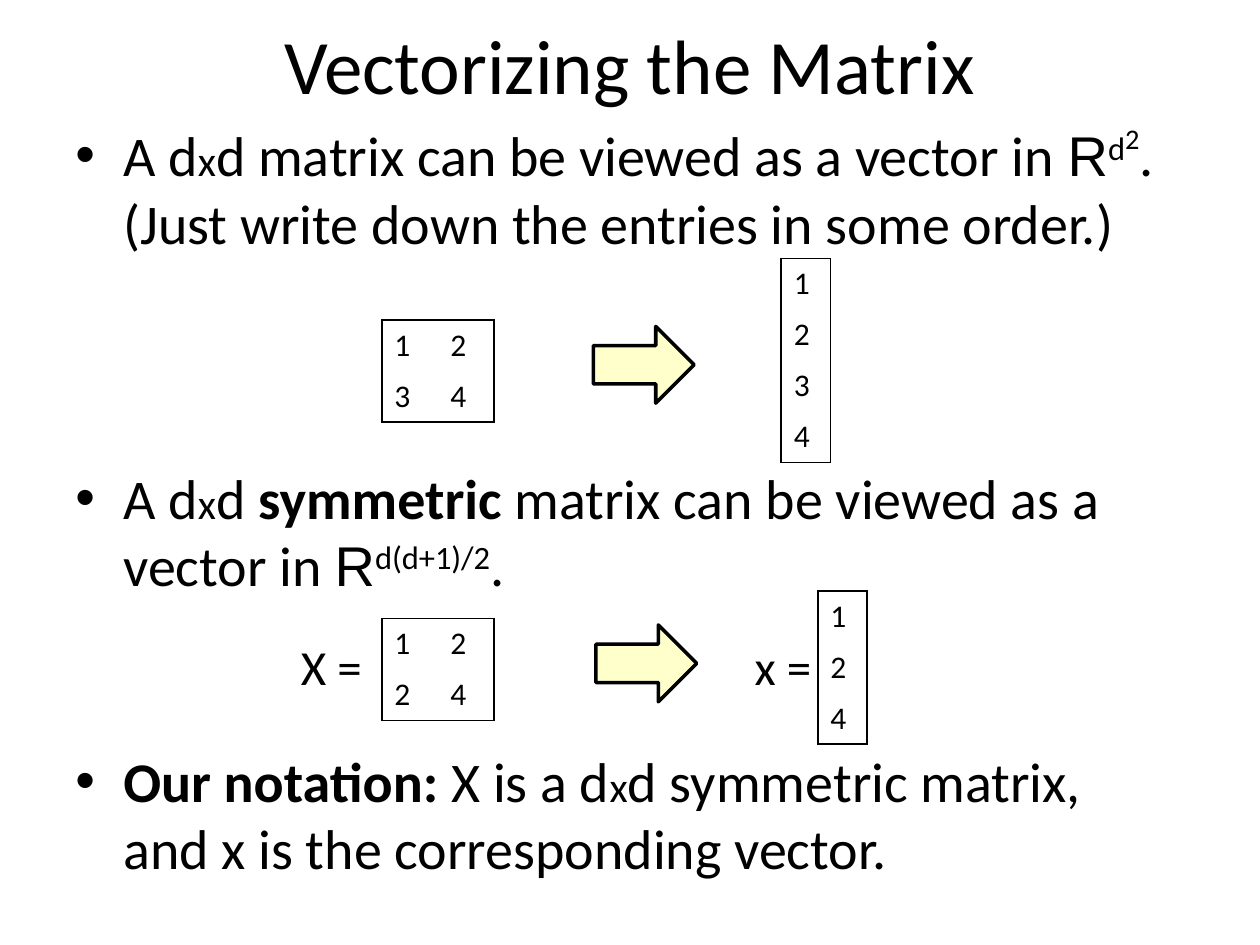
"""Builds a slide on turning a matrix into a vector."""
from lxml import etree
from pptx import Presentation
from pptx import util as u
from pptx.dml import color
from pptx.enum import shapes, text
from pptx.oxml import ns

BLACK = "000000"
CREAM = "FFFFCC"


def rgb(value):
    return color.RGBColor.from_string(value)


class Painter:
    def __init__(self, page, font="Calibri", ink=BLACK):
        self.page, self.font, self.ink = page, font, ink

    def span(self, para, words, size, bold=False, font=None, raised=0):
        span = para.add_run()
        span.text = words
        span.font.size = u.Pt(size)
        span.font.name = font or self.font
        span.font.bold = bold
        span.font.color.rgb = rgb(self.ink)
        if raised:
            span.font._element.set("baseline", str(raised * 1000))

    def box(self, left, top, width, height, wrap=True):
        frame = self.page.shapes.add_textbox(*map(u.Inches, (left, top, width, height))).text_frame
        frame.word_wrap = wrap
        return frame

    def label(self, words, size, *place, centred=False):
        frame = self.box(*place, wrap=centred)
        if centred:
            frame.vertical_anchor = text.MSO_ANCHOR.MIDDLE
            frame.paragraphs[0].alignment = text.PP_ALIGN.CENTER
        self.span(frame.paragraphs[0], words, size)

    def bullets(self, items, size, indent, *place):
        frame = self.box(*place)
        for index, (gap, lines) in enumerate(items):
            para = frame.add_paragraph() if index else frame.paragraphs[0]
            para.space_before = u.Pt(gap)
            props = para._p.get_or_add_pPr()
            props.set("marL", str(u.Inches(indent)))
            props.set("indent", str(-u.Inches(indent)))
            etree.SubElement(props, ns.qn("a:buFont")).set("typeface", "Arial")
            etree.SubElement(props, ns.qn("a:buChar")).set("char", "•")
            for number, line in enumerate(lines):
                if number:
                    para.add_line_break()
                for words, style in line:
                    self.span(para, words, **{"size": size, **style})

    def edge(self, props, side, visible, position):
        line = etree.Element(ns.qn(f"a:ln{side}"), w=str(u.Pt(1)))
        fill = etree.SubElement(line, ns.qn("a:solidFill" if visible else "a:noFill"))
        if visible:
            etree.SubElement(fill, ns.qn("a:srgbClr")).set("val", self.ink)
        props.insert(position, line)

    def matrix(self, rows, left, top, width, row_height=0.405):
        last_row, last_col = len(rows) - 1, len(rows[0]) - 1
        size = (left, top, width, row_height * len(rows))
        table = self.page.shapes.add_table(len(rows), len(rows[0]), *map(u.Inches, size)).table
        table.first_row = table.horz_banding = False
        for r, row in enumerate(rows):
            for c, value in enumerate(row):
                cell = table.cell(r, c)
                cell.fill.background()
                self.span(cell.text_frame.paragraphs[0], str(value), 18)
                sides = {"L": c == 0, "R": c == last_col, "T": r == 0, "B": r == last_row}
                for position, (side, visible) in enumerate(sides.items()):
                    self.edge(cell._tc.get_or_add_tcPr(), side, visible, position)

    def arrow(self, left, top):
        place = map(u.Inches, (left, top, 0.8, 0.61))
        shape = self.page.shapes.add_shape(shapes.MSO_SHAPE.RIGHT_ARROW, *place)
        shape.shadow.inherit = False
        shape.fill.solid()
        shape.fill.fore_color.rgb = rgb(CREAM)
        shape.line.color.rgb = rgb(self.ink)
        shape.line.width = u.Pt(2)


def main():
    deck = Presentation()
    deck.slide_width, deck.slide_height = u.Inches(10), u.Inches(7.5)
    painter = Painter(deck.slides.add_slide(deck.slide_layouts[6]))

    plain, bold, times = {}, {"bold": True}, ("x", {"size": 24})
    reals = ("R", {"font": "Arial"})
    items = [
        (0, [
            [("A d", plain), times, ("d matrix can be viewed as a vector in ", plain), reals,
             ("d", {"raised": 30}), ("2", {"size": 28, "raised": 55}), (".", plain)],
            [("(Just write down the entries in some order.)", plain)],
        ]),
        (119, [
            [("A d", plain), times, ("d ", plain), ("symmetric", bold),
             (" matrix can be viewed as a vector in ", plain), reals,
             ("d(d+1)/2", {"raised": 30}), (".", plain)],
        ]),
        (85, [
            [("Our notation:", bold), (" X is a d", plain), times, ("d symmetric matrix,", plain)],
            [("and x is the corresponding vector.", plain)],
        ]),
    ]
    painter.label("Vectorizing the Matrix", 44, 0.5, 0, 9, 1.01, centred=True)
    painter.bullets(items, 32, 0.38, 0.5, 0.91, 9.21, 6.29)

    painter.matrix([[1, 2], [3, 4]], 3.03, 2.54, 0.89)
    painter.arrow(4.71, 2.59)
    painter.matrix([[1], [2], [3], [4]], 6.2, 2.05, 0.39)

    painter.label("X =", 28, 2.29, 5, 0.78, 0.57)
    painter.matrix([[1, 2], [2, 4]], 3.03, 4.91, 0.89)
    painter.arrow(4.73, 4.96)
    painter.label("x =", 28, 5.89, 5, 0.75, 0.57)
    painter.matrix([[1], [2], [4]], 6.49, 4.69, 0.39)

    deck.save("out.pptx")


if __name__ == "__main__":
    main()
